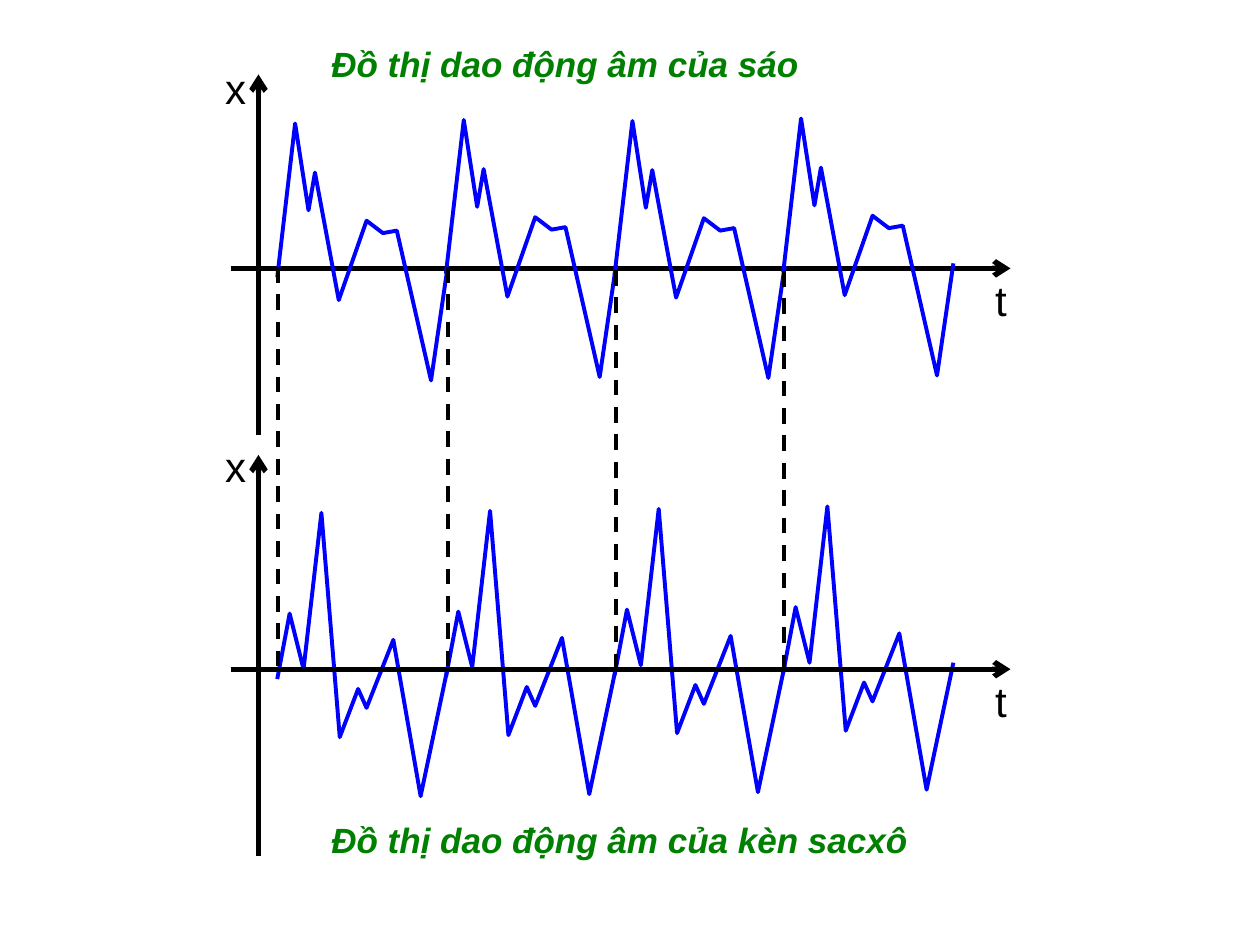
import pptx
import pptx.util
import pptx.dml.color
import pptx.enum.dml
import pptx.enum.shapes
import pptx.enum.text
import lxml.etree

Cm, Pt = pptx.util.Cm, pptx.util.Pt


def tint(code):
    return pptx.dml.color.RGBColor.from_string(code)


class Pen:
    """Draws the lines, waves and texts of a slide in one style."""

    font, ink, blue, green = "Arial", "000000", "0000FF", "008000"

    def __init__(self, slide):
        self.slide = slide

    def line(self, x1, y1, x2, y2, width=3, tip=None, dash=False):
        kind = pptx.enum.shapes.MSO_CONNECTOR.STRAIGHT
        rule = self.slide.shapes.add_connector(kind, Cm(x1), Cm(y1), Cm(x2), Cm(y2))
        rule.line.color.rgb = tint(self.ink)
        rule.line.width = Pt(width)
        if dash:
            rule.line.dash_style = pptx.enum.dml.MSO_LINE.DASH
        space = "{http://schemas.openxmlformats.org/drawingml/2006/main}"
        props = rule._element.spPr
        if tip:
            lxml.etree.SubElement(props.find(space + "ln"), space + tip, type="arrow")
        lxml.etree.SubElement(props, space + "effectLst")

    def wave(self, x, y, steps):
        form = self.slide.shapes.build_freeform(Cm(x), Cm(y))
        form.add_line_segments([(Cm(x + dx), Cm(y + dy)) for dx, dy in steps], close=False)
        curve = form.convert_to_shape()
        curve.shadow.inherit = False
        curve.fill.background()
        curve.line.color.rgb = tint(self.blue)
        curve.line.width = Pt(2.25)

    def text(self, words, x, y, w, h, size, color, strong=False):
        box = self.slide.shapes.add_textbox(Cm(x), Cm(y), Cm(w), Cm(h))
        frame = box.text_frame
        frame.word_wrap = True
        frame.auto_size = pptx.enum.text.MSO_AUTO_SIZE.SHAPE_TO_FIT_TEXT
        frame.text = words
        font = frame.paragraphs[0].runs[0].font
        font.name, font.size = self.font, Pt(size)
        font.bold = font.italic = strong
        font.color.rgb = tint(color)

    def title(self, words, y, w):
        self.text(words, 6.43, y, w, 1.09, 20, self.green, True)

    def axes(self, zero, top, foot, label):
        self.line(4.65, zero, 20.37, zero, tip="tailEnd")
        self.line(5.21, top, 5.21, foot, tip="headEnd")
        self.text("t", 19.81, zero, 1.63, 1.27, 24, self.ink)
        self.text("x", 4.29, label, 1.63, 1.27, 24, self.ink)

    def train(self, y, lifts, steps):
        for i, lift in enumerate(lifts):
            self.wave(5.59 + 3.4 * i, y - lift, steps)


def main():
    deck = pptx.Presentation()
    deck.slide_width, deck.slide_height = Cm(25.4), Cm(19.05)
    pen = Pen(deck.slides.add_slide(deck.slide_layouts[6]))

    sax = [(0.25, -1.32), (0.53, -0.2), (0.89, -3.35), (1.26, 1.17), (1.63, 0.2),
           (1.8, 0.58), (2.34, -0.79), (2.89, 2.36), (3.43, -0.2)]
    flute = [(0.36, -3.1), (0.63, -1.35), (0.76, -2.11), (1.24, 0.46), (1.8, -1.14),
             (2.13, -0.89), (2.41, -0.94), (3.1, 2.08), (3.43, -0.18)]

    pen.train(13.69, (0, 0.04, 0.08, 0.13), sax)
    pen.axes(13.49, 9.17, 17.25, 8.76)
    pen.axes(5.41, 1.5, 8.76, 1.14)
    pen.train(5.59, (0, 0.07, 0.05, 0.1), flute)
    pen.title("Đồ thị dao động âm của kèn sacxô", 16.38, 13.97)
    pen.title("Đồ thị dao động âm của sáo", 0.74, 10.36)
    for x, y in ((5.61, 5.38), (9.04, 5.38), (12.42, 5.44), (15.8, 5.46)):
        pen.line(x, y, x, y + 8.05, width=2.25, dash=True)

    deck.save("out.pptx")


if __name__ == "__main__":
    main()
